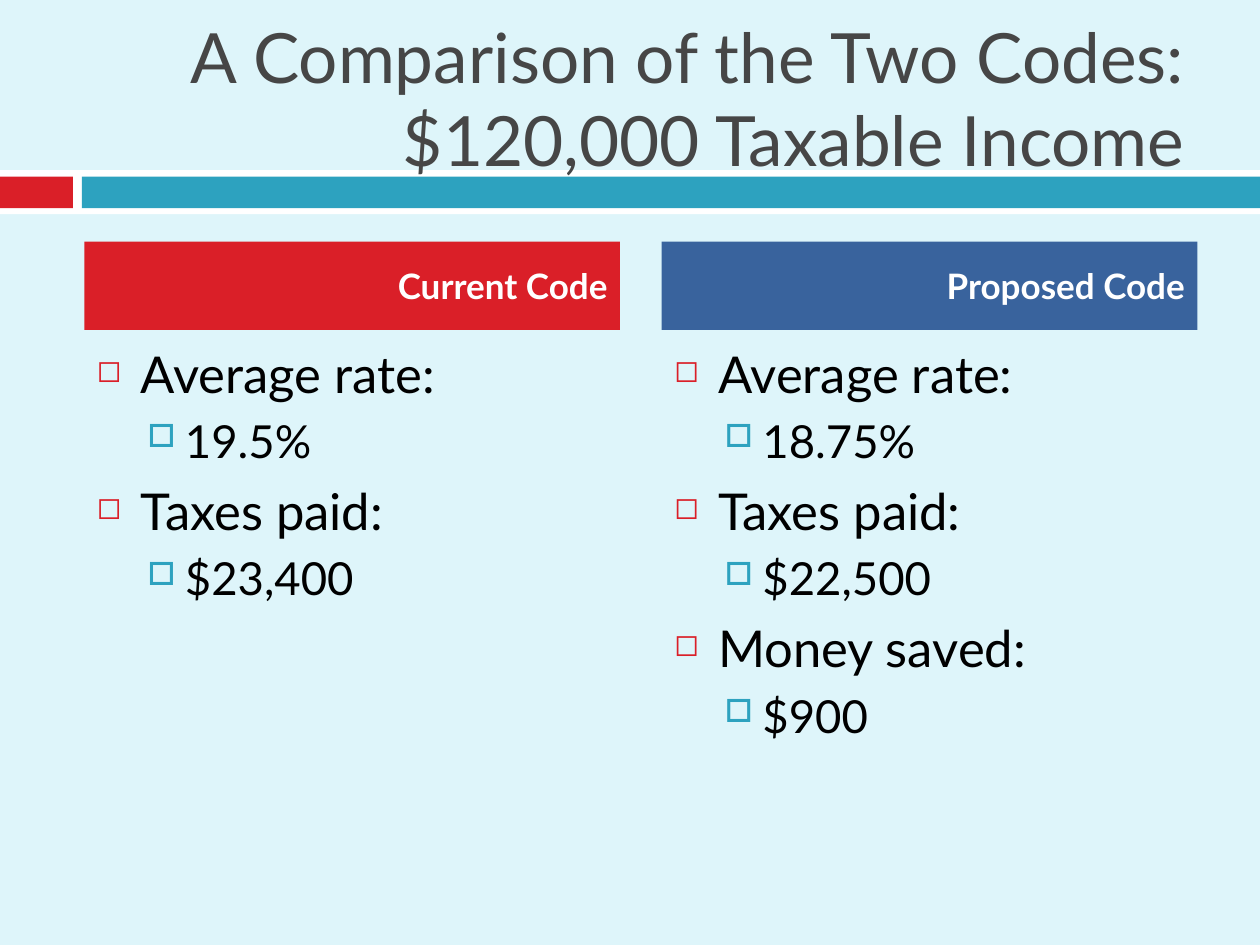
from lxml import etree
from pptx import Presentation
from pptx.dml.color import RGBColor
from pptx.enum.shapes import MSO_SHAPE
from pptx.enum.text import MSO_ANCHOR, MSO_AUTO_SIZE, PP_ALIGN
from pptx.oxml.ns import qn
from pptx.util import Cm, Pt

RECT = MSO_SHAPE.RECTANGLE
MIDDLE, TOP = MSO_ANCHOR.MIDDLE, MSO_ANCHOR.TOP
RIGHT, LEFT = PP_ALIGN.RIGHT, PP_ALIGN.LEFT
FIXED = MSO_AUTO_SIZE.NONE
FONT = "Lato"
RED, TEAL, BLUE = "DA1F28", "2DA2BF", "39639D"
WHITE, BLACK, GRAY, PALE = "FFFFFF", "000000", "464646", "DEF5FA"

TITLE = "A Comparison of the Two Codes:\v$120,000 Taxable Income"
COLUMNS = [
    ("Current Code", RED, [("Average rate:", "19.5%"), ("Taxes paid:", "$23,400")]),
    ("Proposed Code", BLUE, [("Average rate:", "18.75%"), ("Taxes paid:", "$22,500"),
                             ("Money saved:", "$900")]),
]
BANDS = [
    (0, 3.43, 25.4, 0.89, WHITE),
    (0, 3.56, 1.47, 0.64, RED),
    (1.65, 3.56, 23.75, 0.64, TEAL),
]
LEVELS = [
    {"size": 29, "before": 7, "indent": 0.89, "hang": 0.89,
     "char": "◻", "color": RED, "scale": 60},
    {"size": 26, "before": 5.5, "indent": 1.78, "hang": 0.76,
     "char": "□", "color": TEAL, "scale": 70},
]
COL_LEFT, COL_W, COL_STEP = 1.7, 10.8, 11.64
HEAD_TOP, HEAD_H = 4.87, 1.78
BODY_TOP, BODY_H = 6.78, 9.96


def rgb(value):
    return RGBColor.from_string(value)


def apply(target, values):
    for name, value in values.items():
        setattr(target, name, value)


def add_band(s, x, y, w, h, color):
    sp = s.shapes.add_shape(RECT, Cm(x), Cm(y), Cm(w), Cm(h))
    sp.shadow.inherit = False
    sp.fill.solid()
    sp.fill.fore_color.rgb = rgb(color)
    sp.line.fill.background()
    return sp


def set_frame(tf, anchor):
    apply(tf, {"word_wrap": True, "auto_size": FIXED, "vertical_anchor": anchor})


def write(p, text, size, color, align=LEFT, bold=False, before=0):
    p.text = text
    apply(p, {"alignment": align, "space_before": Pt(before), "line_spacing": 1.0})
    for r in p.runs:
        apply(r.font, {"name": FONT, "size": Pt(size), "bold": bold})
        r.font.color.rgb = rgb(color)


def add_bullet(p, level):
    pPr = p._p.get_or_add_pPr()
    pPr.set("marL", str(Cm(level["indent"])))
    pPr.set("indent", str(-Cm(level["hang"])))
    color = etree.SubElement(pPr, qn("a:buClr"))
    etree.SubElement(color, qn("a:srgbClr"), val=level["color"])
    etree.SubElement(pPr, qn("a:buSzPct"), val=str(level["scale"] * 1000))
    etree.SubElement(pPr, qn("a:buChar"), char=level["char"])


def add_column(s, x, heading, color, pairs):
    sp = add_band(s, x, HEAD_TOP, COL_W, HEAD_H, color)
    set_frame(sp.text_frame, MIDDLE)
    write(sp.text_frame.paragraphs[0], heading, 20, WHITE, RIGHT, True, 7)

    tf = s.shapes.add_textbox(Cm(x), Cm(BODY_TOP), Cm(COL_W), Cm(BODY_H)).text_frame
    set_frame(tf, TOP)
    lines = [(i, text) for pair in pairs for i, text in enumerate(pair)]
    for n, (i, text) in enumerate(lines):
        p = tf.add_paragraph() if n else tf.paragraphs[0]
        level = LEVELS[i]
        p.level = i
        write(p, text, level["size"], BLACK, before=level["before"])
        add_bullet(p, level)


def main():
    prs = Presentation()
    apply(prs, {"slide_width": Cm(25.4), "slide_height": Cm(19.05)})
    s = prs.slides.add_slide(prs.slide_layouts[5])
    s.background.fill.solid()
    s.background.fill.fore_color.rgb = rgb(PALE)

    for band in BANDS:
        add_band(s, *band)

    title = s.shapes.title
    apply(title, {"left": Cm(1.47), "top": Cm(0.76), "width": Cm(22.66), "height": Cm(2.41)})
    set_frame(title.text_frame, MIDDLE)
    write(title.text_frame.paragraphs[0], TITLE, 39.6, GRAY, RIGHT)
    s.shapes._spTree.append(title._element)

    for n, column in enumerate(COLUMNS):
        add_column(s, COL_LEFT + n * COL_STEP, *column)
    prs.save("out.pptx")


if __name__ == "__main__":
    main()
